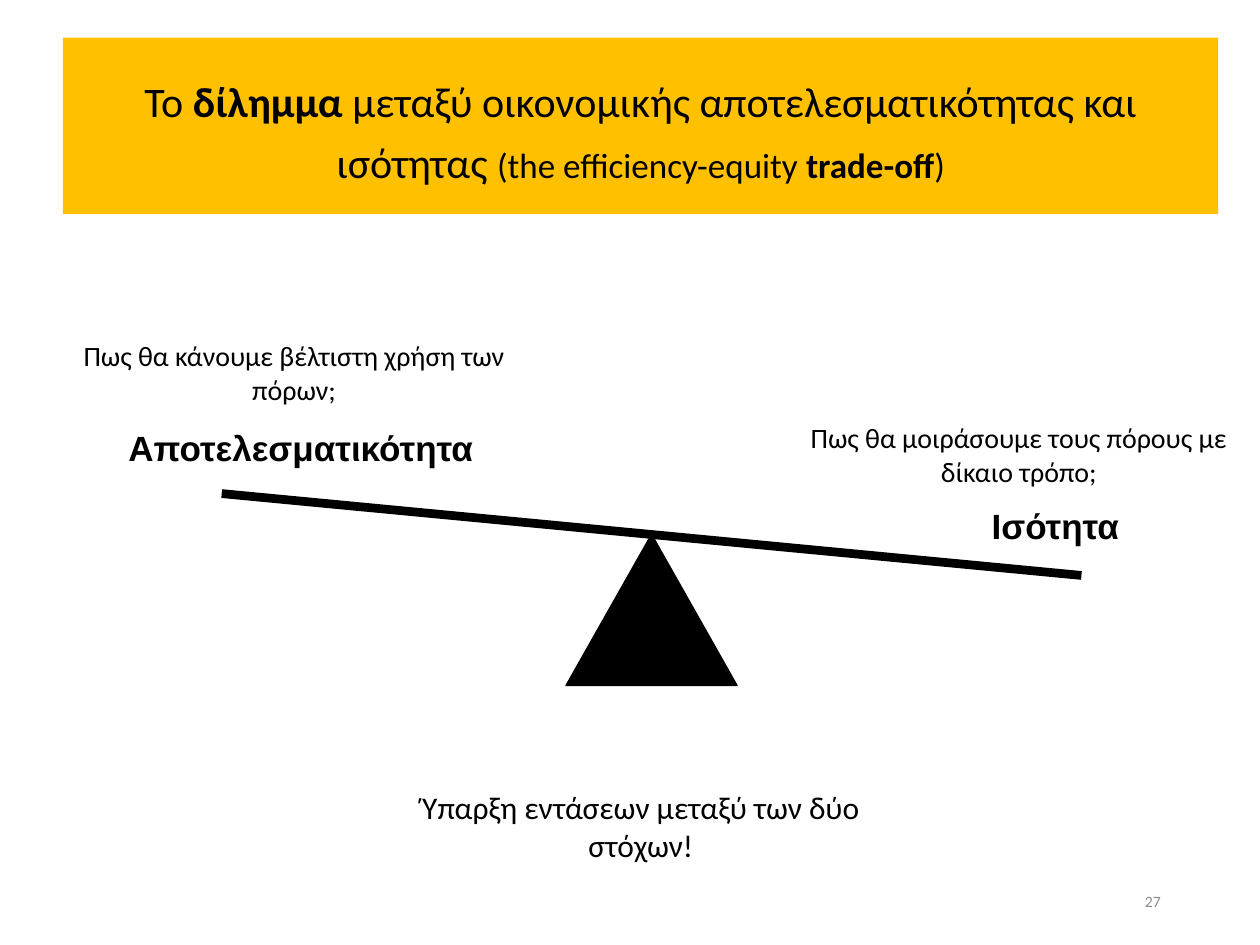
from lxml.etree import SubElement
from pptx import Presentation
from pptx.dml.color import RGBColor
from pptx.enum.shapes import MSO_CONNECTOR, MSO_SHAPE
from pptx.enum.text import MSO_ANCHOR, PP_ALIGN
from pptx.oxml.ns import qn
from pptx.util import Cm, Pt

COLORS = {"banner": "FFC000", "ink": "000000", "muted": "8C8C8C"}
BODY = {"name": "Calibri", "size": Pt(16), "bold": False}
LABEL = {"name": "Arial", "size": Pt(20), "bold": True}


def rgb(key):
    return RGBColor.from_string(COLORS[key])


def write(tf, runs, fmt, align=PP_ALIGN.CENTER, color="ink"):
    p = tf.paragraphs[0]
    p.alignment = align
    for text, changes in runs:
        r = p.add_run()
        r.text = text
        for key, value in {**fmt, **changes}.items():
            setattr(r.font, key, value)
        r.font.color.rgb = rgb(color)
    return p


def add_text(shapes, box, text, fmt, align=PP_ALIGN.CENTER, color="ink",
             wrap=True, anchor=MSO_ANCHOR.TOP):
    tf = shapes.add_textbox(*map(Cm, box)).text_frame
    tf.word_wrap = wrap
    tf.vertical_anchor = anchor
    write(tf, [(text, {})], fmt, align, color)


def add_title(s, box):
    sp = s.shapes.add_shape(MSO_SHAPE.RECTANGLE, *map(Cm, box))
    sp.shadow.inherit = False
    sp.fill.solid()
    sp.fill.fore_color.rgb = rgb("banner")
    sp.line.fill.background()
    tf = sp.text_frame
    tf.word_wrap = True
    tf.vertical_anchor = MSO_ANCHOR.MIDDLE
    small = {"size": Pt(20)}
    p = write(tf, [
        ("Το ", {}),
        ("δίλημμα", {"bold": True}),
        (" μεταξύ οικονομικής αποτελεσματικότητας και ισότητας ", {}),
        ("(the efficiency-equity ", small),
        ("trade-off", {**small, "bold": True}),
        (")", small),
    ], {**BODY, "size": Pt(24)})
    p.line_spacing = 1.2
    p.space_after = Pt(6)


def add_seesaw(s, left, top):
    shapes = s.shapes.add_group_shape().shapes
    pivot = shapes.add_shape(MSO_SHAPE.ISOSCELES_TRIANGLE, Cm(left + 9.07),
                             Cm(top + 2.29), Cm(3.45), Cm(3.05))
    pivot.shadow.inherit = False
    pivot.fill.solid()
    pivot.fill.fore_color.rgb = rgb("ink")
    pivot.line.color.rgb = rgb("ink")
    pivot.line.width = Pt(0.75)

    beam = shapes.add_connector(MSO_CONNECTOR.STRAIGHT, Cm(left + 2.13), Cm(top + 1.47),
                                Cm(left + 19.46), Cm(top + 3.12))
    beam.line.color.rgb = rgb("ink")
    beam.line.width = Pt(5)
    SubElement(beam._element.spPr, qn("a:effectLst"))

    add_text(shapes, (left, top, 8.92, 1.45), "Αποτελεσματικότητα", LABEL, PP_ALIGN.LEFT)
    add_text(shapes, (left + 17.4, top + 1.57, 3.1, 1.45), "Ισότητα", LABEL,
             PP_ALIGN.LEFT, wrap=False)


def add_questions(s, left, top):
    questions = [
        (0, 0, "Πως θα κάνουμε βέλτιστη χρήση των πόρων;"),
        (14.61, 1.65, "Πως θα μοιράσουμε τους πόρους με δίκαιο τρόπο;"),
    ]
    for dx, dy, text in questions:
        add_text(s.shapes, (left + dx, top + dy, 9.32, 1.63), text, BODY)


def add_conclusion(s, box):
    add_text(s.shapes, box, "Ύπαρξη εντάσεων μεταξύ των δύο στόχων!",
             {**BODY, "size": Pt(18)})


def add_number(s, box):
    add_text(s.shapes, box, "27", {**BODY, "size": Pt(9)}, PP_ALIGN.RIGHT,
             "muted", anchor=MSO_ANCHOR.MIDDLE)


def main():
    prs = Presentation()
    prs.slide_width, prs.slide_height = Cm(25.4), Cm(19.05)
    s = prs.slides.add_slide(prs.slide_layouts[6])
    add_title(s, (1.27, 0.76, 23.29, 3.56))
    add_seesaw(s, 2.34, 8.48)
    add_number(s, (17.93, 17.65, 5.72, 1.02))
    add_conclusion(s, (8.26, 15.77, 9.32, 1.8))
    add_questions(s, 1.27, 6.71)
    prs.save("out.pptx")


if __name__ == "__main__":
    main()
